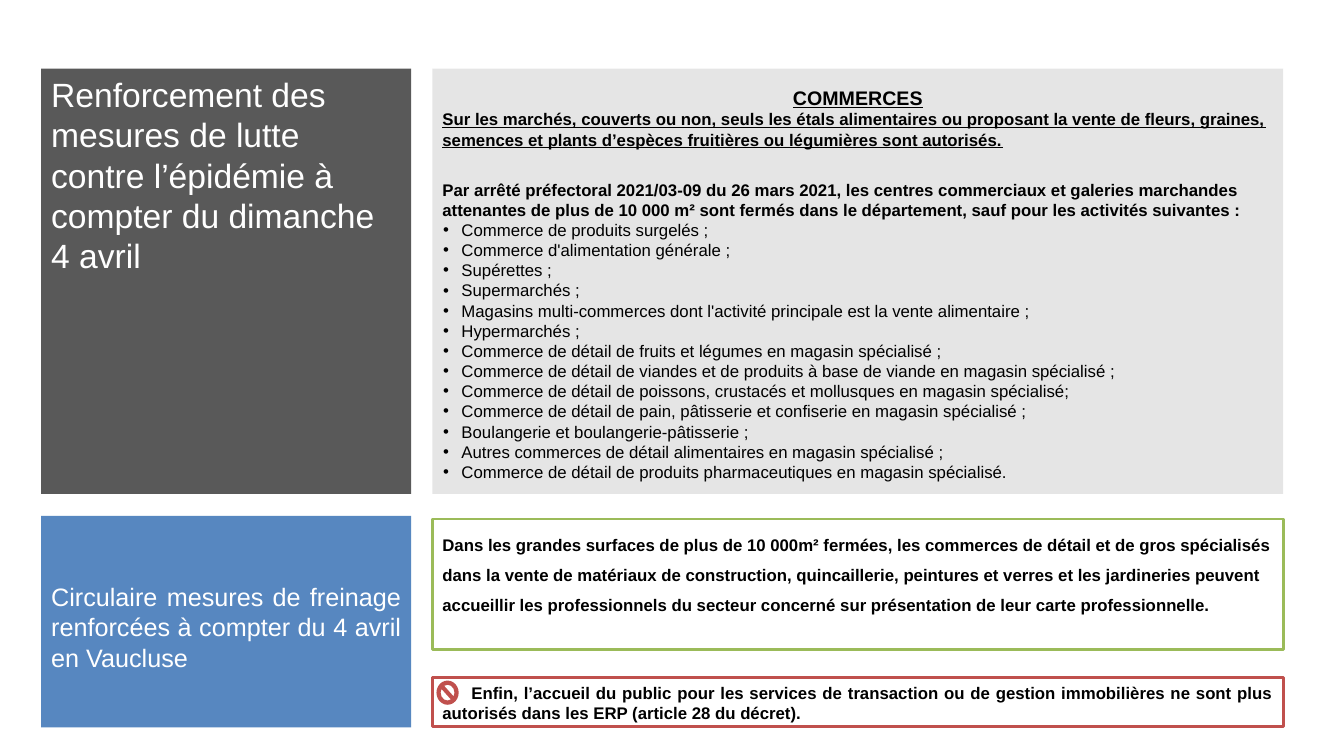
"""Builds the slide on reinforced health measures for shops in Vaucluse."""
from dataclasses import dataclass

from lxml import etree
from pptx import Presentation
from pptx.dml.color import RGBColor
from pptx.enum.shapes import MSO_SHAPE
from pptx.enum.text import MSO_ANCHOR, PP_ALIGN
from pptx.oxml.ns import qn
from pptx.util import Cm, Pt

RECTANGLE, NO_SYMBOL = MSO_SHAPE.RECTANGLE, MSO_SHAPE.NO_SYMBOL
TOP = MSO_ANCHOR.TOP
LEFT, CENTER, JUSTIFY = PP_ALIGN.LEFT, PP_ALIGN.CENTER, PP_ALIGN.JUSTIFY

TITLE = "Renforcement des mesures de lutte contre l’épidémie à compter du dimanche 4 avril"
CIRCULAR = "Circulaire mesures de freinage renforcées à compter du 4 avril en Vaucluse "
SHOPS_HEADING = "COMMERCES"
MARKETS = (
    "Sur les marchés, couverts ou non, seuls les étals alimentaires ou proposant la vente de "
    "fleurs, graines, semences et plants d’espèces fruitières ou légumières sont autorisés."
)
DECREE = (
    "Par arrêté préfectoral 2021/03-09 du 26 mars 2021, les centres commerciaux et galeries "
    "marchandes attenantes de plus de 10 000 m² sont fermés dans le département, sauf pour les "
    "activités suivantes :"
)
OPEN_SHOPS = [
    "Commerce de produits surgelés ;",
    "Commerce d'alimentation générale ;",
    "Supérettes ;",
    "Supermarchés ;",
    "Magasins multi-commerces dont l'activité principale est la vente alimentaire ;",
    "Hypermarchés ;",
    "Commerce de détail de fruits et légumes en magasin spécialisé ;",
    "Commerce de détail de viandes et de produits à base de viande en magasin spécialisé ;",
    "Commerce de détail de poissons, crustacés et mollusques en magasin spécialisé;",
    "Commerce de détail de pain, pâtisserie et confiserie en magasin spécialisé ;",
    "Boulangerie et boulangerie-pâtisserie ;",
    "Autres commerces de détail alimentaires en magasin spécialisé ;",
    "Commerce de détail de produits pharmaceutiques en magasin spécialisé.",
]
PROFESSIONALS = (
    "Dans les grandes surfaces de plus de 10 000m² fermées, les commerces de détail et de gros "
    "spécialisés dans la vente de matériaux de construction, quincaillerie, peintures et verres "
    "et les jardineries peuvent accueillir les professionnels du secteur concerné sur "
    "présentation de leur carte professionnelle."
)
REAL_ESTATE = (
    "Enfin, l’accueil du public pour les services de transaction ou de gestion immobilières ne "
    "sont plus autorisés dans les ERP (article 28 du décret)."
)


@dataclass(frozen=True)
class Theme:
    """Holds the colours, font and type sizes."""
    font: str = "Arial"
    white: str = "FFFFFF"
    black: str = "000000"
    dark: str = "595959"
    grey: str = "808080"
    blue: str = "4F81BD"
    green: str = "9BBB59"
    red: str = "C0504D"
    title: int = 24
    subtitle: int = 18
    heading: int = 14
    body: int = 12


THEME = Theme()
SIDE_LEFT, SIDE_WIDTH = 1.04, 9.32
MAIN_LEFT, MAIN_WIDTH = 10.9, 21.44
UPPER_TOP, UPPER_HEIGHT = 1.73, 10.72


def add_panel(slide, box, fill, opacity=100, line=None, kind=RECTANGLE, top_inset=0.13):
    """Adds a filled shape ready for text."""
    shape = slide.shapes.add_shape(kind, *(Cm(length) for length in box))
    shape.shadow.inherit = False
    shape.fill.solid()
    shape.fill.fore_color.rgb = RGBColor.from_string(fill)
    if opacity < 100:
        color = shape.fill._xPr.find(".//" + qn("a:srgbClr"))
        etree.SubElement(color, qn("a:alpha"), val=str(opacity * 1000))
    if line:
        shape.line.color.rgb = RGBColor.from_string(line)
        shape.line.width = Pt(2)
    else:
        shape.line.fill.background()
    frame = shape.text_frame
    frame.word_wrap = True
    frame.vertical_anchor = TOP
    frame.margin_left = frame.margin_right = Cm(0.25)
    frame.margin_top, frame.margin_bottom = Cm(top_inset), Cm(0.13)
    return shape


def write(shape, text, size=THEME.body, color=THEME.black, bold=False, underline=False,
          align=LEFT, spacing=1.0, before=0, margin=0, indent=0, bullet=None):
    """Adds one paragraph, reusing the first while it is still empty."""
    frame = shape.text_frame
    paragraph = frame.paragraphs[0]
    if paragraph.runs:
        paragraph = frame.add_paragraph()
    paragraph.alignment = align
    paragraph.line_spacing = spacing
    paragraph.space_before = Pt(before)
    properties = paragraph._p.get_or_add_pPr()
    properties.set("marL", str(Cm(margin)))
    properties.set("indent", str(Cm(indent)))
    if bullet:
        bullet_color = etree.SubElement(properties, qn("a:buClr"))
        etree.SubElement(bullet_color, qn("a:srgbClr"), val=color)
        etree.SubElement(properties, qn("a:buFont"), typeface=THEME.font)
        etree.SubElement(properties, qn("a:buChar"), char=bullet)
    run = paragraph.add_run()
    run.text = text
    run.font.name = THEME.font
    run.font.size = Pt(size)
    run.font.bold = bold
    run.font.underline = underline
    run.font.color.rgb = RGBColor.from_string(color)


def main():
    """Lays out the panels and saves the presentation."""
    presentation = Presentation()
    presentation.slide_width, presentation.slide_height = Cm(33.87), Cm(19.05)
    slide = presentation.slides.add_slide(presentation.slide_layouts[6])

    title = add_panel(slide, (SIDE_LEFT, UPPER_TOP, SIDE_WIDTH, UPPER_HEIGHT), THEME.dark)
    write(title, TITLE, THEME.title, THEME.white)

    circular = add_panel(slide, (SIDE_LEFT, 13, SIDE_WIDTH, 5.33), THEME.blue, 95, top_inset=1.65)
    write(circular, CIRCULAR, THEME.subtitle, THEME.white, align=JUSTIFY)

    shops = add_panel(slide, (MAIN_LEFT, UPPER_TOP, MAIN_WIDTH, UPPER_HEIGHT), THEME.grey, 20)
    write(shops, SHOPS_HEADING, THEME.heading, bold=True, underline=True, align=CENTER, spacing=1.5)
    write(shops, MARKETS, bold=True, underline=True)
    write(shops, DECREE, bold=True, before=21.4)
    for shop in OPEN_SHOPS:
        write(shops, shop, margin=0.48, indent=-0.46, bullet="•")

    professionals = add_panel(slide, (MAIN_LEFT, 13.08, MAIN_WIDTH, 3.28), THEME.white,
                              line=THEME.green)
    write(professionals, PROFESSIONALS, bold=True, spacing=1.5)

    real_estate = add_panel(slide, (MAIN_LEFT, 17.07, MAIN_WIDTH, 1.24), THEME.white,
                            line=THEME.red)
    write(real_estate, REAL_ESTATE, bold=True, align=JUSTIFY, indent=0.73)

    ban_sign = add_panel(slide, (11, 17.15, 0.56, 0.61), THEME.red, kind=NO_SYMBOL)
    ban_sign.adjustments[0] = 0.19

    presentation.save("out.pptx")


if __name__ == "__main__":
    main()
